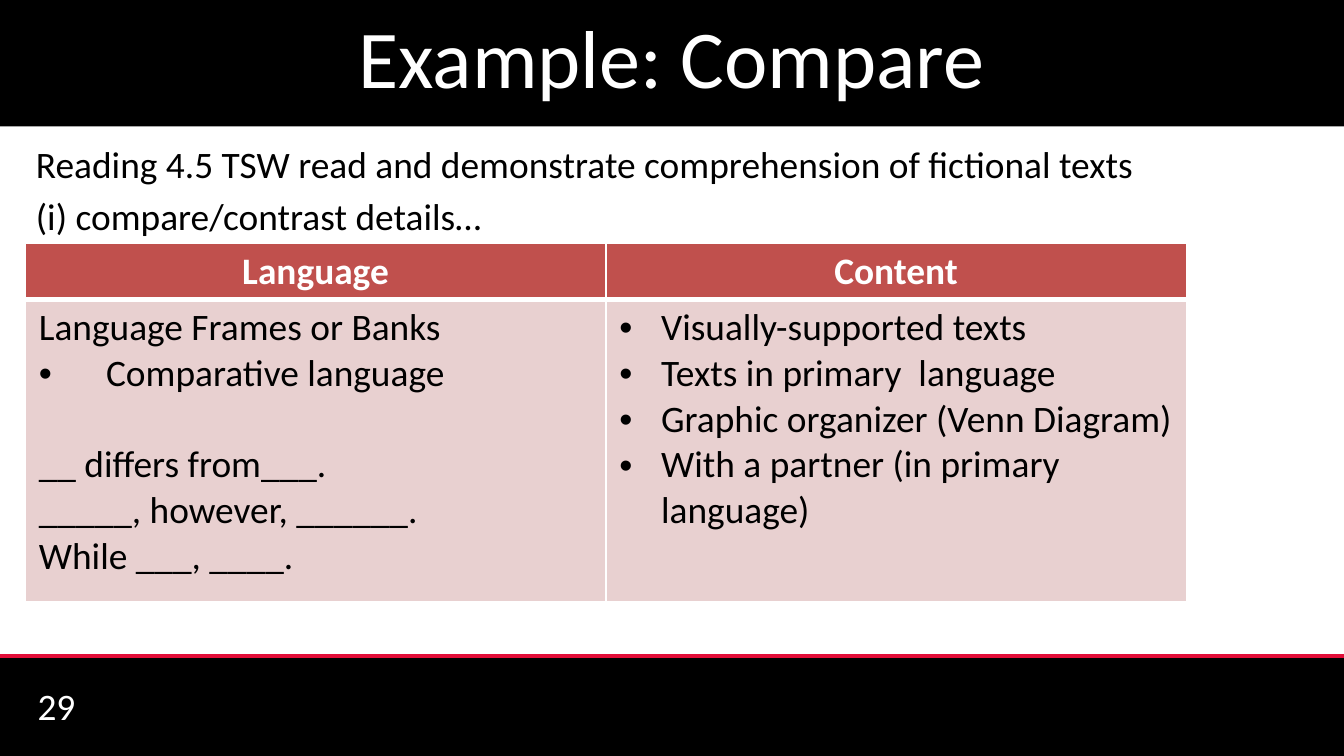
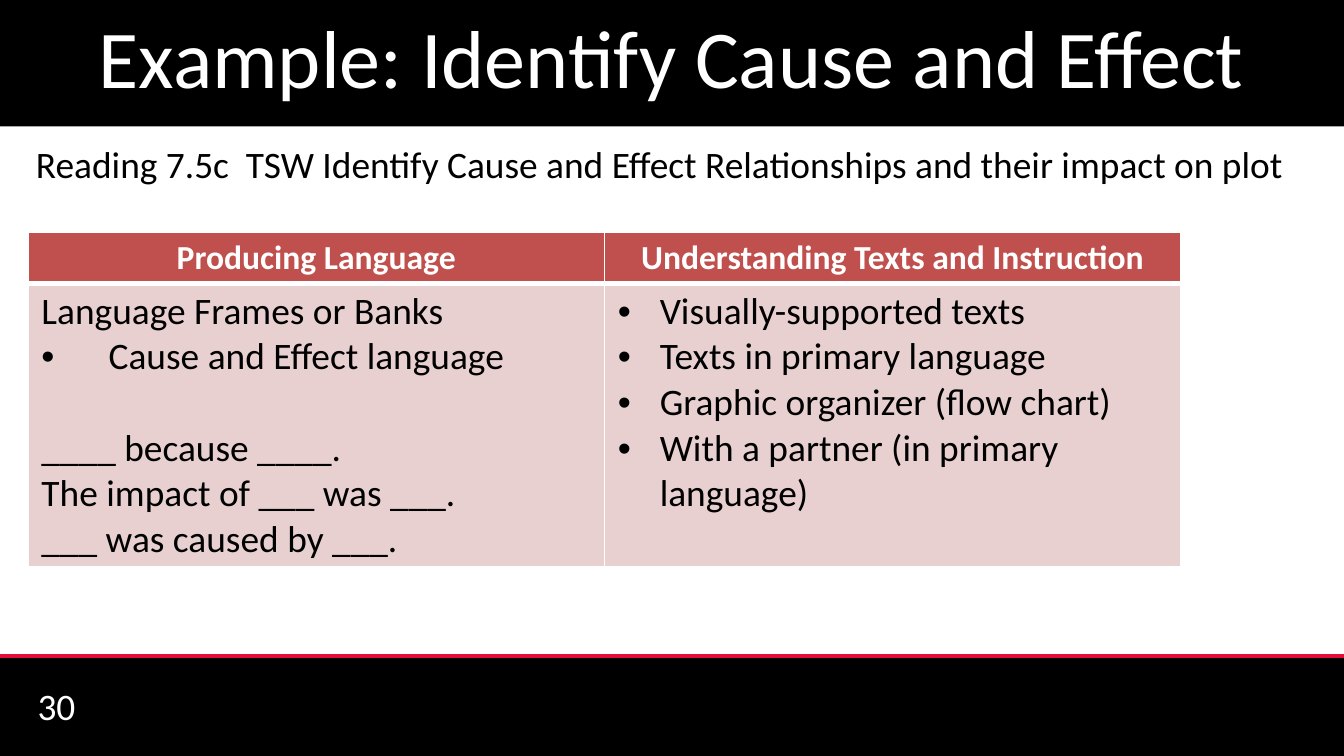
from lxml import etree
from pptx import Presentation
from pptx.dml.color import RGBColor
from pptx.enum import shapes, text
from pptx.oxml import ns
from pptx.util import Cm, Pt

BLACK = RGBColor(0, 0, 0)
WHITE = RGBColor(255, 255, 255)
RED = RGBColor(0xE2, 0x0D, 0x38)
BRICK = RGBColor(0xC0, 0x50, 0x4D)
PINK = RGBColor(0xE8, 0xD0, 0xD0)
WIDE, HIGH = Cm(25.4), Cm(14.29)
FOOT = Cm(12.4)
LINE = Pt(24.4)
MID = text.PP_ALIGN.CENTER
LEFT = text.PP_ALIGN.LEFT


def write(frame, lines, size, color, align=LEFT, bold=False):
    frame.word_wrap = True
    for i, (words, indent, gap) in enumerate(lines):
        para = frame.paragraphs[0] if i == 0 else frame.add_paragraph()
        para.text = words
        para.alignment = align
        if gap:
            para.space_before = gap
        if indent:
            props = para._p.get_or_add_pPr()
            props.set("marL", str(indent))
            props.set("indent", str(-indent))
            etree.SubElement(props, ns.qn("a:buFont")).set("typeface", "Arial")
            etree.SubElement(props, ns.qn("a:buChar")).set("char", "•")
        font = para.font
        font.name, font.size, font.bold = "Calibri", Pt(size), bold
        font.color.rgb = color


def edge(cell, widths):
    props = cell._tc.get_or_add_tcPr()
    for i, (side, width) in enumerate(zip("LRTB", widths)):
        line = etree.Element(ns.qn("a:ln" + side), w=str(Pt(width)))
        fill = etree.SubElement(line, ns.qn("a:solidFill"))
        etree.SubElement(fill, ns.qn("a:srgbClr")).set("val", str(WHITE))
        props.insert(i, line)


pages = [
    dict(
        num="29",
        title="Example: Compare",
        goal=["Reading 4.5 TSW read and demonstrate comprehension of fictional texts",
              "(i) compare/contrast details…"],
        box=(0.48, 4.6, 21.94), rows=(1.07, 5.71), size=20,
        heads=["Language", "Content"],
        topic="Comparative language",
        frames=["__ differs from___.", "_____, however, ______.", "While ___, ____."],
        aids=["Visually-supported texts", "Texts in primary  language",
              "Graphic organizer (Venn Diagram)",
              "With a partner (in primary language)"],
    ),
    dict(
        num="30",
        title="Example: Identify Cause and Effect",
        goal=["Reading 7.5c  TSW Identify Cause and Effect Relationships "
              "and their impact on plot"],
        box=(0.53, 4.39, 21.79), rows=(0.96, 5.36), size=18,
        heads=["Producing Language", "Understanding Texts and Instruction"],
        topic="Cause and Effect language",
        frames=["____ because ____.", "The impact of ___ was ___.",
                "___ was caused by ___."],
        aids=["Visually-supported texts", "Texts in primary language",
              "Graphic organizer (flow chart)",
              "With a partner (in primary language)"],
    ),
]

deck = Presentation()
deck.slide_width, deck.slide_height = WIDE, HIGH

for page in pages:
    slide = deck.slides.add_slide(deck.slide_layouts[6])
    parts = slide.shapes

    bands = []
    for top, high in ((FOOT, HIGH - FOOT), (0, Cm(2.39))):
        band = parts.add_shape(shapes.MSO_SHAPE.RECTANGLE, 0, top, WIDE, high)
        band.shadow.inherit = False
        band.fill.solid()
        band.fill.fore_color.rgb = BLACK
        band.line.fill.background()
        bands.append(band)
    title = bands[1].text_frame
    title.vertical_anchor = text.MSO_ANCHOR.TOP
    write(title, [(page["title"], 0, 0)], 44, WHITE, MID)

    rule = parts.add_connector(shapes.MSO_CONNECTOR.STRAIGHT, 0, FOOT, WIDE, FOOT)
    rule.line.color.rgb = RED
    rule.line.width = Pt(2)
    etree.SubElement(rule._element.spPr, ns.qn("a:effectLst"))

    num = parts.add_textbox(Cm(0.46), Cm(12.95), Cm(5.92), Cm(0.76)).text_frame
    num.vertical_anchor = text.MSO_ANCHOR.MIDDLE
    write(num, [(page["num"], 0, 0)], 20, WHITE)

    left, top, wide = page["box"]
    grid = parts.add_table(2, 2, Cm(left), Cm(top), Cm(wide), Cm(sum(page["rows"]))).table
    for row, high in zip(grid.rows, page["rows"]):
        row.height = Cm(high)

    first, *rest = page["frames"]
    bank = [("Language Frames or Banks", 0, 0), (page["topic"], Cm(1.27), 0),
            (first, 0, LINE)] + [(words, 0, 0) for words in rest]
    aids = [(words, Cm(0.79), 0) for words in page["aids"]]
    for col, (head, body) in enumerate(zip(page["heads"], (bank, aids))):
        top, low = grid.cell(0, col), grid.cell(1, col)
        write(top.text_frame, [(head, 0, 0)], page["size"], WHITE, MID, True)
        write(low.text_frame, body, 20, BLACK)
        for cell, color, widths in ((top, BRICK, (1, 1, 1, 3)), (low, PINK, (1, 1, 3, 1))):
            cell.margin_top = cell.margin_bottom = Cm(0.1)
            cell.fill.solid()
            cell.fill.fore_color.rgb = color
            edge(cell, widths)

    goal = parts.add_textbox(Cm(0.43), Cm(2.54), Cm(24.56), Cm(6.5)).text_frame
    write(goal, [(words, 0, Pt(4) if i else 0) for i, words in enumerate(page["goal"])],
          20, BLACK)

deck.save("out.pptx")
